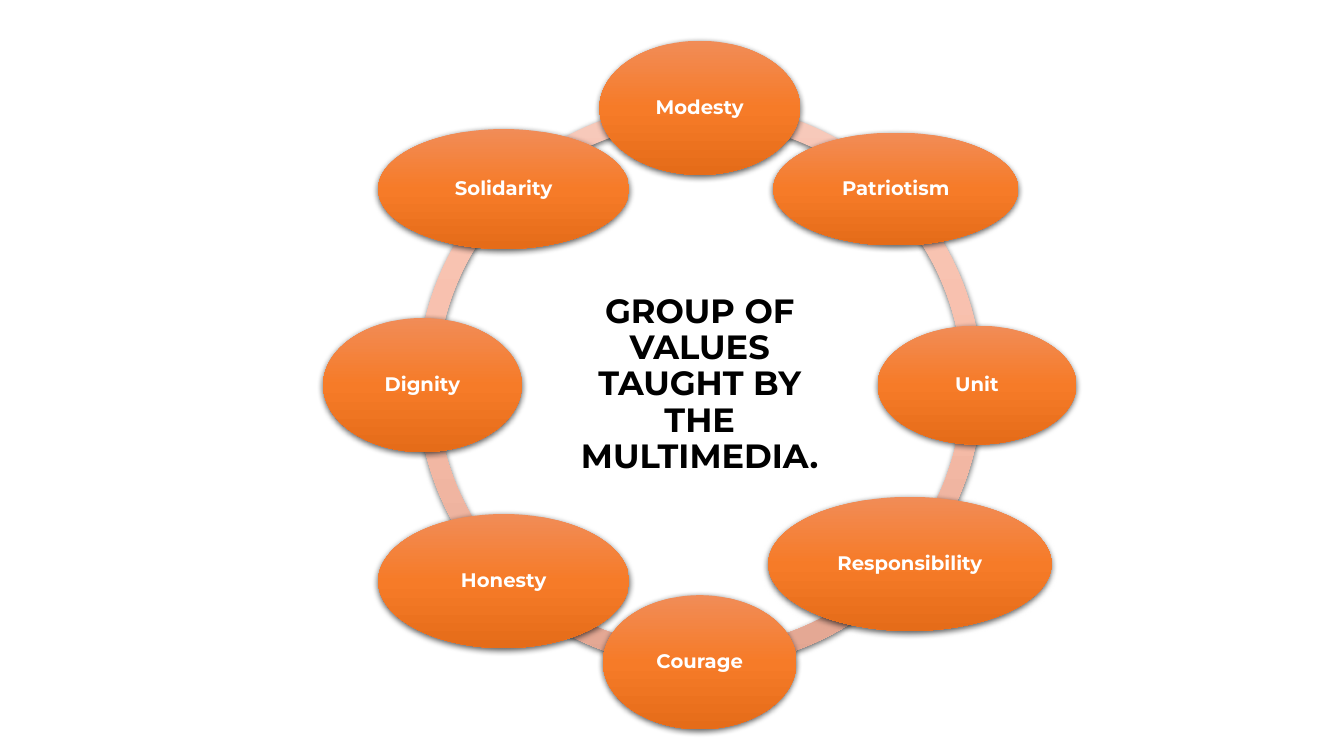
import copy
import math

import pptx
import pptx.dml.color
import pptx.enum.shapes
import pptx.enum.text
import pptx.oxml.ns
import pptx.util
from lxml import etree

Inches = pptx.util.Inches
Pt = pptx.util.Pt
qn = pptx.oxml.ns.qn
MSO_SHAPE = pptx.enum.shapes.MSO_SHAPE

COLORS = {
    "heading": "000000",
    "label": "FFFFFF",
    "shadow": "000000",
    "band_top": "F7C9BA",
    "band_middle": "F8BEAA",
    "band_bottom": "E2A692",
    "value_top": "F18C57",
    "value_middle": "F67B28",
    "value_bottom": "E56C19",
}
FONT = "Montserrat"
RING_BOX = (4.14, 1.02, 5.6, 5.6)
HEADING_SIZE = (2.6, 1.99)
ORBIT_RADIUS = 2.75
BAND_THICKNESS = 0.034
FULL_TURN = 216  # block arc adjustments count 0.6 units per degree

# Clockwise from the top: label, width, height, shift off the orbit
VALUES = [
    ("Modesty", 1.99, 1.33, (0, 0)),
    ("Patriotism", 2.43, 1.12, (0, 0)),
    ("Unit", 1.97, 1.18, (0, 0)),
    ("Responsibility", 2.81, 1.33, (0.14, -0.17)),
    ("Courage", 1.92, 1.33, (0, 0)),
    ("Honesty", 2.49, 1.33, (0, 0)),
    ("Dignity", 1.97, 1.33, (0, 0)),
    ("Solidarity", 2.49, 1.19, (0, 0)),
]


def rgb(name):
    return pptx.dml.color.RGBColor.from_string(COLORS[name])


def centred_box(center_x, center_y, width, height):
    return center_x - width / 2, center_y - height / 2, width, height


def style_relief(shape, tone):
    """Give a shape a vertical three-stop gradient, no line and a soft shadow."""
    shape.line.fill.background()
    shape.fill.gradient()
    shape.fill.gradient_angle = 270
    stops = shape.element.find(".//" + qn("a:gsLst"))
    stops.insert(1, copy.deepcopy(stops[0]))
    levels = zip(shape.fill.gradient_stops, ("top", "middle", "bottom"), (0, 0.5, 1))
    for stop, level, position in levels:
        stop.color.rgb = rgb(f"{tone}_{level}")
        stop.position = position

    shape.shadow.inherit = False
    effects = shape.element.spPr.find(qn("a:effectLst"))
    shadow = etree.SubElement(
        effects, qn("a:outerShdw"), blurRad=str(Pt(4.5)), dist=str(Pt(1.5)),
        dir="5400000", algn="ctr", rotWithShape="0")
    color = etree.SubElement(shadow, qn("a:srgbClr"), val=COLORS["shadow"])
    etree.SubElement(color, qn("a:alpha"), val="63000")


def write_centred(shape, text, size, color, inset, line_spacing):
    frame = shape.text_frame
    frame.text = text
    frame_format = {
        "word_wrap": True,
        "auto_size": pptx.enum.text.MSO_AUTO_SIZE.NONE,
        "vertical_anchor": pptx.enum.text.MSO_ANCHOR.MIDDLE,
    }
    for side in ("left", "top", "right", "bottom"):
        frame_format[f"margin_{side}"] = Inches(inset)
    for name, value in frame_format.items():
        setattr(frame, name, value)
    paragraph = frame.paragraphs[0]
    paragraph.alignment = pptx.enum.text.PP_ALIGN.CENTER
    paragraph.line_spacing = line_spacing
    font = paragraph.runs[0].font
    for name, value in {"name": FONT, "size": Pt(size), "bold": True}.items():
        setattr(font, name, value)
    font.color.rgb = rgb(color)


def add_heading(slide, box):
    heading = slide.shapes.title
    for name, length in zip(("left", "top", "width", "height"), box):
        setattr(heading, name, Inches(length))
    write_centred(heading, "GROUP OF VALUES TAUGHT BY THE MULTIMEDIA.",
                  24, "heading", 0.03, 0.9)


def add_ring(slide, box, count):
    step = FULL_TURN / count
    for index in range(count):
        band = slide.shapes.add_shape(MSO_SHAPE.BLOCK_ARC, *map(Inches, box))
        band.adjustments[0] = index * step
        band.adjustments[1] = (index + 1) * step % FULL_TURN
        band.adjustments[2] = BAND_THICKNESS
        style_relief(band, "band")


def add_value(slide, box, label):
    value = slide.shapes.add_shape(MSO_SHAPE.OVAL, *map(Inches, box))
    style_relief(value, "value")
    write_centred(value, label, 14, "label", 0.02, 0.9)


def add_value_cycle(slide, box):
    """Draw the ring in the box, its heading and the values spaced around it."""
    left, top, width, height = box
    center_x, center_y = left + width / 2, top + height / 2
    add_ring(slide, box, len(VALUES))
    add_heading(slide, centred_box(center_x, center_y, *HEADING_SIZE))
    for index, (label, oval_width, oval_height, shift) in enumerate(VALUES):
        angle = math.tau * index / len(VALUES)
        x = center_x + ORBIT_RADIUS * math.sin(angle) + shift[0]
        y = center_y - ORBIT_RADIUS * math.cos(angle) + shift[1]
        add_value(slide, centred_box(x, y, oval_width, oval_height), label)


def main():
    deck = pptx.Presentation()
    deck.slide_width = Inches(13.33)
    deck.slide_height = Inches(7.5)
    title_only = deck.slide_layouts.get_by_name("Title Only")
    slide = deck.slides.add_slide(title_only)
    add_value_cycle(slide, RING_BOX)
    deck.save("out.pptx")


if __name__ == "__main__":
    main()
